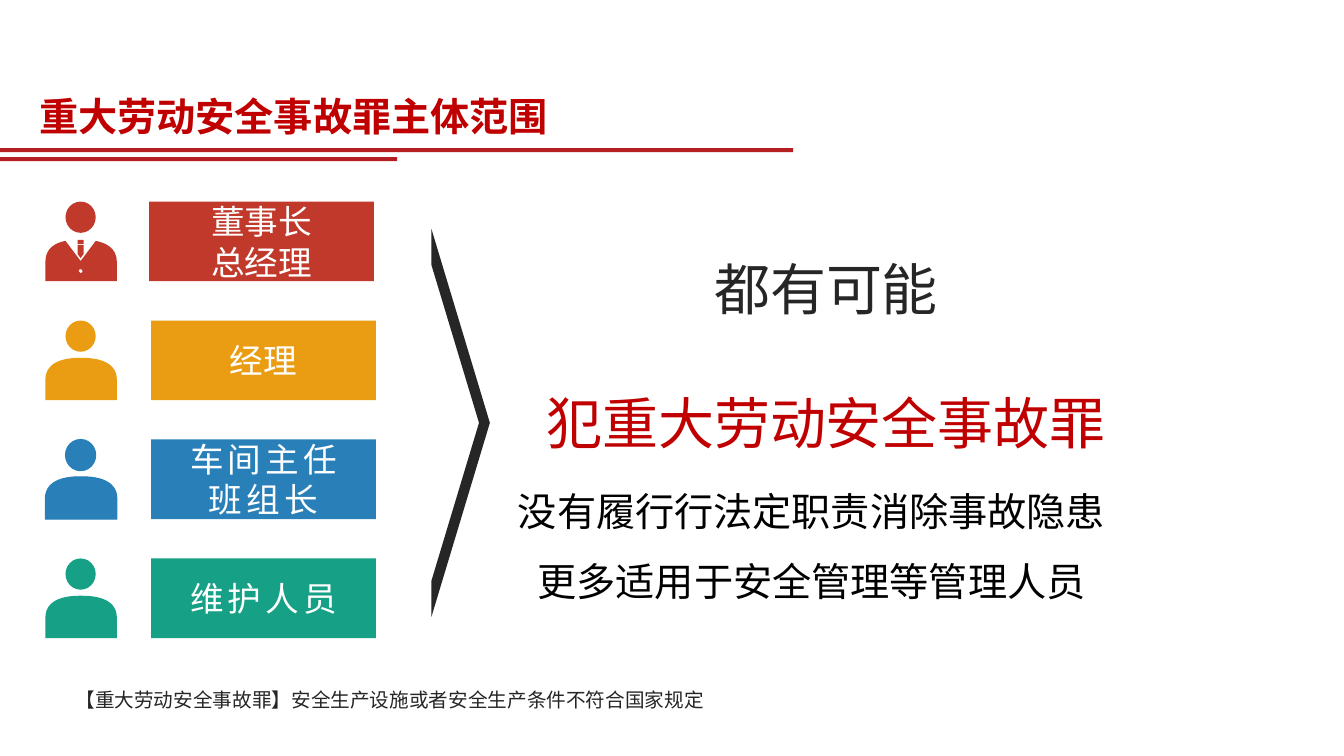
from lxml.etree import SubElement
from pptx import Presentation
from pptx.dml.color import RGBColor
from pptx.enum.shapes import MSO_SHAPE
from pptx.enum.text import MSO_ANCHOR, MSO_AUTO_SIZE, PP_ALIGN
from pptx.oxml.ns import qn
from pptx.util import Inches, Pt

COLOURS = {
    "rule": "B61F22", "title": "C00000", "dark": "262626", "black": "000000",
    "white": "FFFFFF", "red": "C0392B", "orange": "EA9C12", "blue": "2980B9",
    "green": "16A085",
}
CJK = "Noto Sans CJK SC"
ICON_LEFT, FIRST_TOP, ROW_PITCH = 0.45, 2, 1.18

# Contours in inches from the icon's top left corner: a start point, then
# segments of one point (a line) or three points (a cubic curve).
PLAIN_BODY = [
    [[(0.71, 0.79)], [(0.71, 0.59)],
     [(0.71, 0.38), (0.46, 0.37), (0.35, 0.37)],
     [(0.25, 0.37), (0, 0.38), (0, 0.59)], [(0, 0.79)]],
]
TIE = [
    [[(0.35, 0.56)], [(0.38, 0.52)], [(0.38, 0.43)], [(0.32, 0.43)], [(0.32, 0.52)]],
]
JACKET = [
    [[(0.5, 0.39)], [(0.35, 0.59)], [(0.2, 0.39)],
     [(0.1, 0.41), (0, 0.46), (0, 0.6)], [(0, 0.79)], [(0.71, 0.79)], [(0.71, 0.6)],
     [(0.71, 0.46), (0.6, 0.41), (0.5, 0.39)]],
    [[(0.35, 0.71)],
     [(0.34, 0.71), (0.33, 0.7), (0.33, 0.69)],
     [(0.33, 0.68), (0.34, 0.67), (0.35, 0.67)],
     [(0.36, 0.67), (0.37, 0.68), (0.37, 0.69)],
     [(0.37, 0.7), (0.36, 0.71), (0.35, 0.71)]],
]

# label lines, colour, label left, letter spacing in points, has a suit, has an outline
ROLES = [
    (["董事长", "总经理"], "red", 1.48, 0, True, False),
    (["经理"], "orange", 1.5, 0, False, False),
    (["车间主任", "班组长"], "blue", 1.5, 3, False, True),
    (["维护人员"], "green", 1.5, 3, False, False),
]


def rgb(name):
    return RGBColor.from_string(COLOURS[name])


def paint(shape, colour, outlined=False):
    shape.shadow.inherit = False
    shape.fill.solid()
    shape.fill.fore_color.rgb = rgb(colour)
    if outlined:
        shape.line.color.rgb = rgb(colour)
        shape.line.width = Pt(0.75)
    else:
        shape.line.fill.background()
    return shape


def add_preset(shapes, preset, box, colour, outlined=False):
    shape = shapes.add_shape(preset, *map(Inches, box))
    return paint(shape, colour, outlined)


def bend(shape, segments):
    """Turn each run of three line points that belongs to a curve into that curve."""
    lines = iter(list(shape._element.iter(qn("a:lnTo"))))
    for segment in segments:
        first, *others = [next(lines) for _ in segment]
        if others:
            first.tag = qn("a:cubicBezTo")
            for line in others:
                first.append(line[0])
                line.getparent().remove(line)


def add_outline(shapes, contours, top, colour, outlined=False):
    builder = None
    for contour in contours:
        start, *points = [(Inches(ICON_LEFT + x), Inches(top + y))
                          for segment in contour for x, y in segment]
        if builder is None:
            builder = shapes.build_freeform(*start, scale=1.0)
        else:
            builder.move_to(*start)
        builder.add_line_segments(points, close=True)
    shape = paint(builder.convert_to_shape(), colour, outlined)
    bend(shape, [segment for contour in contours for segment in contour[1:]])


def write(frame, lines, size, font=CJK, bold=False, align=PP_ALIGN.CENTER,
          line_spacing=None, letter_spacing=0):
    """Fill a text frame with (text, colour) lines."""
    for index, (text, colour) in enumerate(lines):
        paragraph = frame.add_paragraph() if index else frame.paragraphs[0]
        formats = {"alignment": align, "line_spacing": line_spacing}
        for name, value in formats.items():
            setattr(paragraph, name, value)
        run = paragraph.add_run()
        run.text = text
        for name, value in {"size": Pt(size), "bold": bold, "name": font}.items():
            setattr(run.font, name, value)
        run.font.color.rgb = rgb(colour)
        properties = run.font._element
        SubElement(properties, qn("a:ea")).set("typeface", font)
        if letter_spacing:
            properties.set("spc", str(letter_spacing * 100))


def add_text(slide, box, lines, size, wrap=True, **formats):
    frame = slide.shapes.add_textbox(*map(Inches, box)).text_frame
    frame.word_wrap = wrap
    frame.auto_size = MSO_AUTO_SIZE.SHAPE_TO_FIT_TEXT
    write(frame, lines, size, **formats)


def add_role(slide, top, labels, colour, label_left, letter_spacing, suited, outlined):
    shapes = slide.shapes.add_group_shape().shapes
    label = add_preset(shapes, MSO_SHAPE.RECTANGLE, (label_left, top, 2.23, 0.79), colour)
    label.text_frame.word_wrap = True
    label.text_frame.vertical_anchor = MSO_ANCHOR.MIDDLE
    write(label.text_frame, [(text, "white") for text in labels], 24,
          letter_spacing=letter_spacing)
    add_preset(shapes, MSO_SHAPE.OVAL, (0.65, top, 0.3, 0.31), colour, outlined)
    if suited:
        knot = (0.77, top + 0.38, 0.06, 0.04)
        add_preset(shapes, MSO_SHAPE.RECTANGLE, knot, colour)
        add_outline(shapes, TIE, top, colour)
        add_outline(shapes, JACKET, top, colour)
    else:
        add_outline(shapes, PLAIN_BODY, top, colour, outlined)


def main():
    presentation = Presentation()
    presentation.slide_width, presentation.slide_height = Inches(40) // 3, Inches(7.5)
    slide = presentation.slides.add_slide(presentation.slide_layouts[6])

    for top, width in ((1.47, 7.87), (1.56, 3.94)):
        add_preset(slide.shapes, MSO_SHAPE.RECTANGLE, (0, top, width, 0.04), "rule")
    add_text(slide, (0.29, 0.87, 11.97, 0.57), [("重大劳动安全事故罪主体范围", "title")],
             28, font="Arial", bold=True, align=PP_ALIGN.LEFT)

    for row, role in enumerate(ROLES):
        add_role(slide, FIRST_TOP + row * ROW_PITCH, *role)

    arrow = add_preset(slide.shapes, MSO_SHAPE.NOTCHED_RIGHT_ARROW,
                       (4.28, 2.27, 0.58, 3.85), "dark")
    arrow.adjustments[0], arrow.adjustments[1] = 0.814, 1

    add_text(slide, (5.28, 1.81, 5.83, 2.6),
             [("都有可能", "dark"), ("犯重大劳动安全事故罪", "title")], 40, line_spacing=2.0)
    add_text(slide, (4.99, 4.55, 6.12, 1.44),
             [("没有履行行法定职责消除事故隐患", "black"),
              ("更多适用于安全管理等管理人员", "black")], 28, wrap=False, line_spacing=1.5)
    add_text(slide, (0.65, 6.66, 6.68, 0.42),
             [("【重大劳动安全事故罪】安全生产设施或者安全生产条件不符合国家规定", "dark")],
             14, align=PP_ALIGN.LEFT, line_spacing=1.5)
    presentation.save("out.pptx")


if __name__ == "__main__":
    main()
